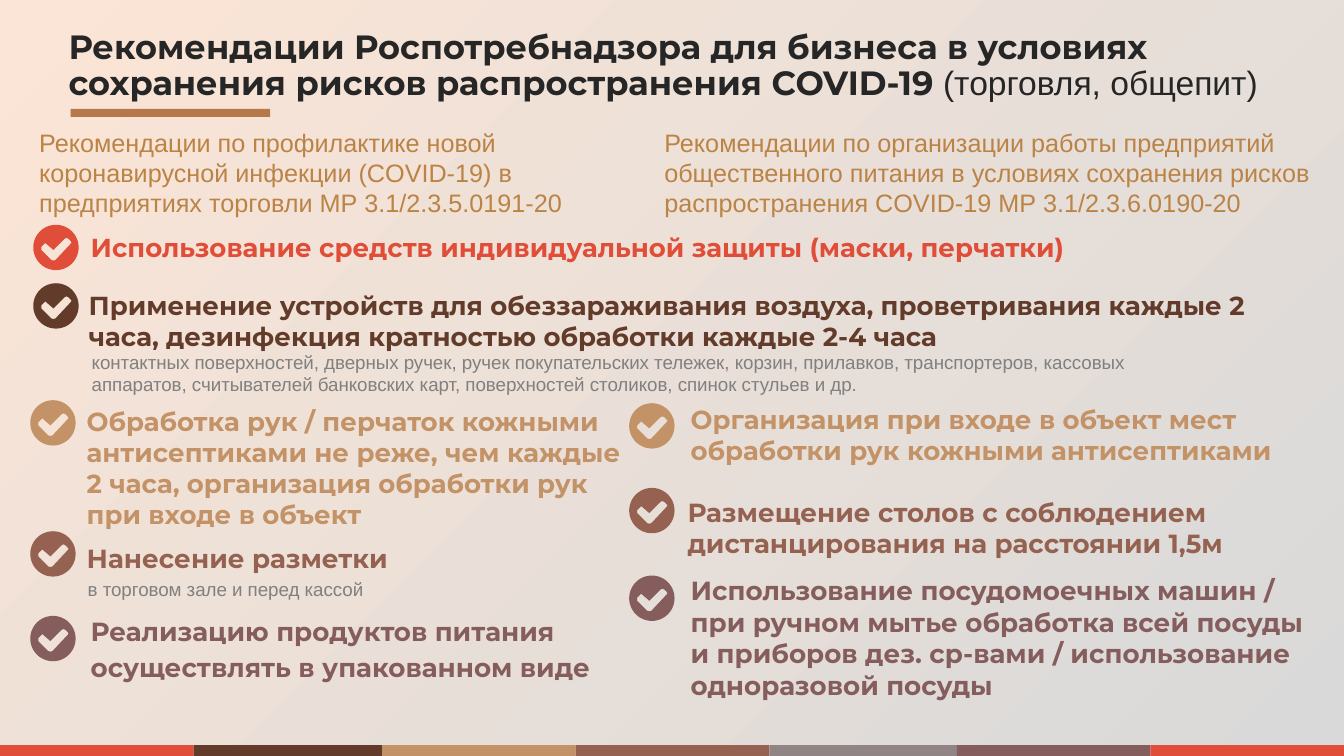
from lxml import etree
from pptx import Presentation
from pptx.dml.color import RGBColor
from pptx.enum import shapes, text
from pptx.oxml.ns import qn
from pptx.util import Inches, Pt

RED = RGBColor(0xE0, 0x4E, 0x39)
BROWN = RGBColor(0x62, 0x3B, 0x2A)
SAND = RGBColor(0xC3, 0x93, 0x67)
CLAY = RGBColor(0x95, 0x62, 0x51)
ASH = RGBColor(0x91, 0x84, 0x85)
PLUM = RGBColor(0x85, 0x5D, 0x5D)
OCHRE = RGBColor(0xBB, 0x83, 0x45)
COPPER = RGBColor(0xB6, 0x78, 0x4A)
INK = RGBColor(0x26, 0x26, 0x26)
GRAY = RGBColor(0x80, 0x80, 0x80)
SILVER = RGBColor(0xD9, 0xD9, 0xD9)
PEACH = RGBColor(0xFB, 0xE5, 0xD6)

HEAD_FONT, BODY_FONT = "Montserrat", "Arial"
RADIUS = 225
RIM = [(450, 225), (225, 450), (0, 225), (225, 0)]
TICK = [(370, 160), (350, 140), (330, 130), (310, 140), (200, 250), (130, 190),
        (120, 180), (110, 190), (80, 220), (80, 250), (180, 350), (200, 355),
        (220, 350), (370, 190), (380, 175)]

LEFT_HEADING = ("Рекомендации по профилактике новой коронавирусной инфекции "
                "(COVID-19) в предприятиях торговли МР 3.1/2.3.5.0191-20")
RIGHT_HEADING = ("Рекомендации по организации работы предприятий общественного "
                 "питания в условиях сохранения рисков распространения "
                 "COVID-19 МР 3.1/2.3.6.0190-20")

ITEMS = [
    ((0.33, 2.23), (0.9, 2.3, 12.36, 0.41), 18.6, RED,
     ["Использование средств индивидуальной защиты (маски, перчатки)"]),
    ((0.33, 2.81), (0.88, 2.87, 11.95, 0.63), 18.6, BROWN,
     ["Применение устройств для обеззараживания воздуха, проветривания каждые "
      "2 часа, дезинфекция кратностью обработки каждые 2-4 часа"]),
    ((0.3, 3.97), (0.86, 4.02, 5.32, 1.26), 18.6, SAND,
     ["Обработка рук / перчаток кожными антисептиками не реже, чем каждые "
      "2 часа, организация обработки рук при входе в объект"]),
    ((0.3, 5.27), (0.86, 5.38, 3.24, 0.31), 18.7, CLAY, ["Нанесение разметки"]),
    ((0.3, 6.11), (0.9, 6.1, 5.14, 0.69), 18.7, PLUM,
     ["Реализацию продуктов питания", "осуществлять в упакованном виде"]),
    ((6.24, 4), (6.85, 4, 6.26, 0.63), 18.6, SAND,
     ["Организация при входе в объект мест обработки рук кожными "
      "антисептиками"]),
    ((6.24, 4.84), (6.82, 4.92, 6.12, 0.63), 18.7, CLAY,
     ["Размещение столов с соблюдением дистанцирования на расстоянии 1,5м"]),
    ((6.24, 5.71), (6.85, 5.7, 6.25, 1.26), 18.7, PLUM,
     ["Использование посудомоечных машин / при ручном мытье обработка всей "
      "посуды и приборов дез. ср-вами / использование одноразовой посуды"]),
]

NOTES = [
    ((0.91, 3.48, 11.01, 0.45),
     "контактных поверхностей, дверных ручек, ручек покупательских тележек, "
     "корзин, прилавков, транспортеров, кассовых аппаратов, считывателей "
     "банковских карт, поверхностей столиков, спинок стульев и др."),
    ((0.87, 5.73, 4.53, 0.22), "в торговом зале и перед кассой"),
]


def add_rect(slide, box):
    sp = slide.shapes.add_shape(shapes.MSO_SHAPE.RECTANGLE, *map(Inches, box))
    sp.shadow.inherit = False
    sp.line.fill.background()
    return sp


def add_bar(slide, box, color):
    sp = add_rect(slide, box)
    sp.fill.solid()
    sp.fill.fore_color.rgb = color


def clear_margins(tf):
    tf.margin_left = tf.margin_top = tf.margin_right = tf.margin_bottom = 0


def add_text(slide, box, lines, size, color, name=BODY_FONT, bold=False, inset=False):
    tf = slide.shapes.add_textbox(*map(Inches, box)).text_frame
    tf.word_wrap = True
    if not inset:
        clear_margins(tf)
    for i, line in enumerate(lines):
        p = tf.add_paragraph() if i else tf.paragraphs[0]
        p.text = line
        p.font.size, p.font.name, p.font.bold = Pt(size), name, bold
        p.font.color.rgb = color
        if i:
            p.space_before = Pt(size * 0.2)


def add_stripe(slide, left, top, height):
    starts = [0, 1.92, 3.79, 5.71, 7.63, 9.49, 11.41]
    colors = [RED, BROWN, SAND, CLAY, ASH, PLUM, RED]
    for start, color in zip(starts, colors):
        add_bar(slide, (left + start, top, 1.92, height), color)


def add_backdrop(slide, box):
    sp = add_rect(slide, box)
    sp.fill.gradient()
    for stop, color in zip(sp.fill.gradient_stops, (SILVER, PEACH)):
        stop.color.rgb = color
    grad = sp.element.spPr.find(qn("a:gradFill"))
    grad.remove(grad.find(qn("a:lin")))
    focus = etree.SubElement(grad, qn("a:path"), {"path": "circle"})
    etree.SubElement(focus, qn("a:fillToRect"), {"l": "100000", "t": "100000"})


def add_title(slide, left, top, width, height):
    sp = slide.shapes.title
    slide.shapes.element.append(sp.element)
    sp.left, sp.top, sp.width, sp.height = map(Inches, (left, top, width, height))
    tf = sp.text_frame
    clear_margins(tf)
    tf.word_wrap = True
    tf.auto_size = text.MSO_AUTO_SIZE.NONE
    tf.vertical_anchor = text.MSO_ANCHOR.TOP
    p = tf.paragraphs[0]
    p.alignment = text.PP_ALIGN.LEFT
    p.line_spacing = 0.9
    p.font.size = Pt(24)
    p.font.color.rgb = INK
    for words, name, bold in [
        ("Рекомендации Роспотребнадзора для бизнеса в условиях сохранения "
         "рисков распространения COVID-19 ", HEAD_FONT, True),
        ("(торговля, общепит)", BODY_FONT, False),
    ]:
        r = p.add_run()
        r.text = words
        r.font.name, r.font.bold = name, bold
    add_bar(slide, (left + 0.02, top + 0.78, 1.98, 0.08), COPPER)


def round_rim(sp):
    start = next(sp.element.iter(qn("a:moveTo")))
    outline = start.getparent()
    for corner in outline.findall(qn("a:lnTo"))[:len(RIM) - 1]:
        outline.remove(corner)
    for angle in (10800000, 0):
        arc = etree.Element(qn("a:arcTo"), {
            "wR": str(RADIUS), "hR": str(RADIUS),
            "stAng": str(angle), "swAng": "10800000"})
        start.addnext(arc)


def add_check(slide, left, top, color):
    fb = slide.shapes.build_freeform(*RIM[0], scale=Inches(1) / 1000)
    fb.add_line_segments(RIM[1:], close=False)
    fb.move_to(*TICK[0])
    fb.add_line_segments(TICK[1:], close=True)
    sp = fb.convert_to_shape(Inches(left), Inches(top))
    round_rim(sp)
    sp.shadow.inherit = False
    sp.fill.solid()
    sp.fill.fore_color.rgb = color
    sp.line.fill.background()


def add_item(slide, icon_at, box, size, color, lines):
    add_text(slide, box, lines, size, color, HEAD_FONT, bold=True)
    add_check(slide, *icon_at, color)


def main():
    prs = Presentation()
    prs.slide_width, prs.slide_height = Inches(13.33), Inches(7.5)
    slide = prs.slides.add_slide(prs.slide_layouts[5])
    add_stripe(slide, 0, 7.36, 0.14)
    add_backdrop(slide, (-0.01, 0, 13.34, 7.39))
    add_title(slide, 0.68, 0.3, 12.23, 0.76)
    add_text(slide, (0.29, 1.21, 6.1, 1.01), [LEFT_HEADING], 18, OCHRE, inset=True)
    add_text(slide, (6.49, 1.21, 6.76, 1.01), [RIGHT_HEADING], 18, OCHRE, inset=True)
    for item in ITEMS:
        add_item(slide, *item)
    for box, note in NOTES:
        add_text(slide, box, [note], 13.33, GRAY)
    prs.save("out.pptx")


if __name__ == "__main__":
    main()
